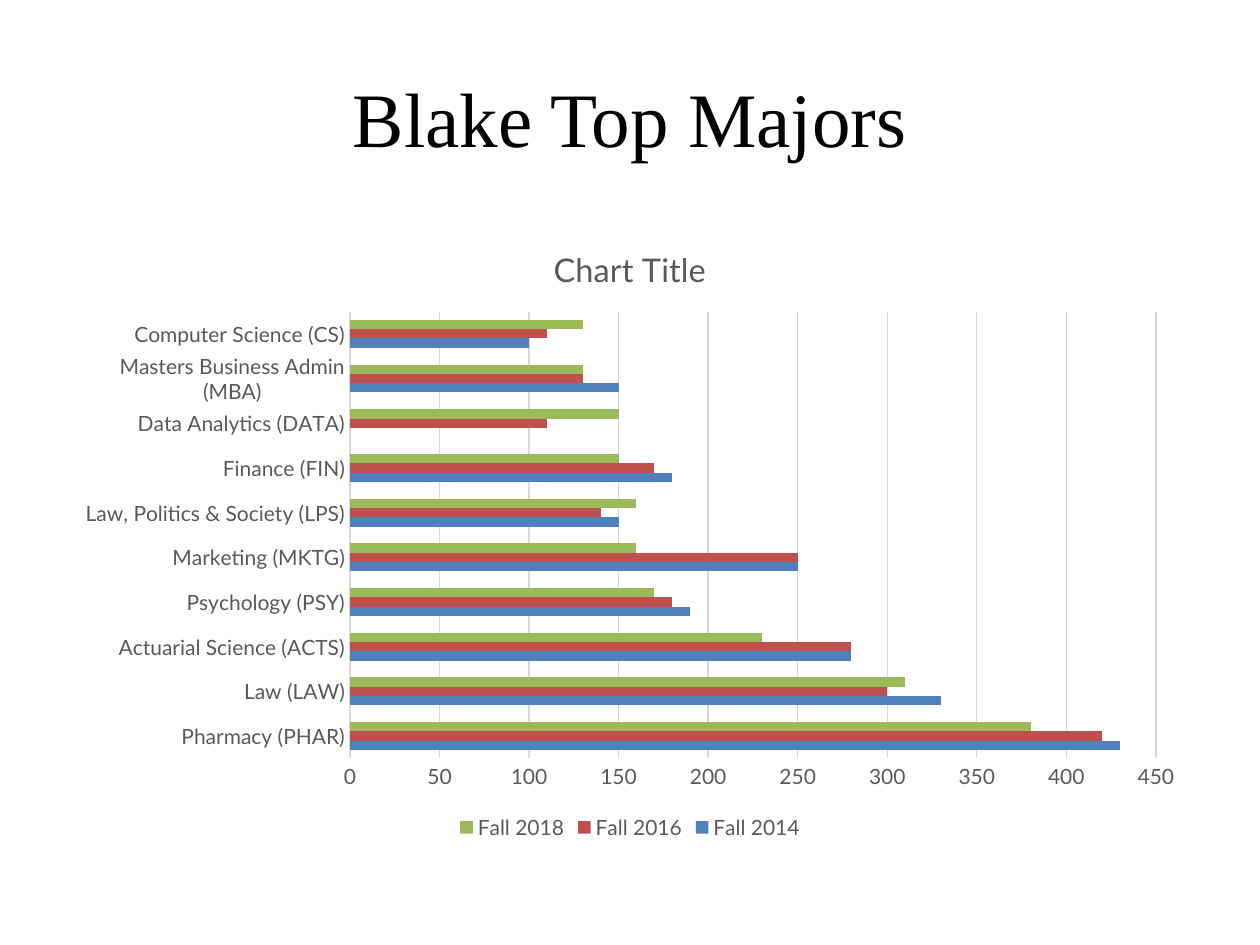
from pptx import Presentation
from pptx.chart.data import CategoryChartData
from pptx.dml.color import RGBColor
from pptx.enum.chart import XL_CHART_TYPE, XL_LEGEND_POSITION, XL_TICK_MARK
from pptx.enum.text import MSO_ANCHOR, PP_ALIGN
from pptx.util import Pt

# Content
TITLE = "Blake Top Majors"
CHART_TITLE = "Chart Title"
MAJORS = [
    "Pharmacy (PHAR)", "Law (LAW)", "Actuarial Science (ACTS)",
    "Psychology (PSY)", "Marketing (MKTG)", "Law, Politics & Society (LPS)",
    "Finance (FIN)", "Data Analytics (DATA)", "Masters Business Admin (MBA)",
    "Computer Science (CS)",
]
TERMS = [
    ("Fall 2014", "blue", [430, 330, 280, 190, 250, 150, 180, None, 150, 100]),
    ("Fall 2016", "red", [420, 300, 280, 180, 250, 140, 170, 110, 130, 110]),
    ("Fall 2018", "green", [380, 310, 230, 170, 160, 160, 150, 150, 130, 130]),
]

# Look and layout, in px at 126 to the inch
COLORS = {"black": "000000", "text": "595959", "line": "D9D9D9",
          "blue": "4F81BD", "red": "C0504D", "green": "9BBB59"}
PX = 914400 // 126
PAGE_SIZE = (1260, 945)
TITLE_BOX = (63, 38, 1134, 157)
CHART_BOX = (63, 221, 1134, 624)
TITLE_FONT = {"name": "Times New Roman", "size": Pt(44)}
BASE_FONT = {"name": "Lato", "size": Pt(10)}
LABEL_FONT = {"name": "Lato", "size": Pt(12), "bold": False}
HEADING_FONT = {"name": "Lato", "size": Pt(18.6), "bold": False}
VALUE_AXIS = {"minimum_scale": 0, "maximum_scale": 450, "major_unit": 50,
              "has_major_gridlines": True}


def emu(lengths):
    return [length * PX for length in lengths]


def set_all(target, values):
    for name, value in values.items():
        setattr(target, name, value)


def color(name):
    return RGBColor.from_string(COLORS[name])


def set_font(font, values, color_name):
    set_all(font, values)
    font.color.rgb = color(color_name)


def set_line(line):
    line.color.rgb = color("line")
    line.width = Pt(0.75)


deck = Presentation()
deck.slide_width, deck.slide_height = emu(PAGE_SIZE)
page = deck.slides.add_slide(deck.slide_layouts[6])

# Slide title
frame = page.shapes.add_textbox(*emu(TITLE_BOX)).text_frame
set_all(frame, {"word_wrap": True, "vertical_anchor": MSO_ANCHOR.MIDDLE})
para = frame.paragraphs[0]
para.alignment = PP_ALIGN.CENTER
span = para.add_run()
span.text = TITLE
set_font(span.font, TITLE_FONT, "black")

# Bar chart
data = CategoryChartData()
data.categories = MAJORS
for term, _, counts in TERMS:
    data.add_series(term, counts)
chart = page.shapes.add_chart(
    XL_CHART_TYPE.BAR_CLUSTERED, *emu(CHART_BOX), data).chart
set_font(chart.font, BASE_FONT, "black")

plot = chart.plots[0]
set_all(plot, {"gap_width": 182, "overlap": 0, "vary_by_categories": False})
for series, (_, fill_name, _) in zip(plot.series, TERMS):
    series.invert_if_negative = False
    series.format.fill.solid()
    series.format.fill.fore_color.rgb = color(fill_name)

# Chart title and legend
chart.has_title = True
heading = chart.chart_title.text_frame
heading.text = CHART_TITLE
set_font(heading.paragraphs[0].runs[0].font, HEADING_FONT, "text")
chart.chart_title.include_in_layout = False
chart.has_legend = True
set_all(chart.legend, {"position": XL_LEGEND_POSITION.BOTTOM,
                       "include_in_layout": False})
set_font(chart.legend.font, LABEL_FONT, "text")

# Axes
for axis in (chart.category_axis, chart.value_axis):
    set_all(axis, {"major_tick_mark": XL_TICK_MARK.NONE,
                   "minor_tick_mark": XL_TICK_MARK.NONE})
    set_font(axis.tick_labels.font, LABEL_FONT, "text")
set_line(chart.category_axis.format.line)
set_all(chart.value_axis, VALUE_AXIS)
set_line(chart.value_axis.major_gridlines.format.line)
chart.value_axis.format.line.fill.background()

deck.save("out.pptx")
